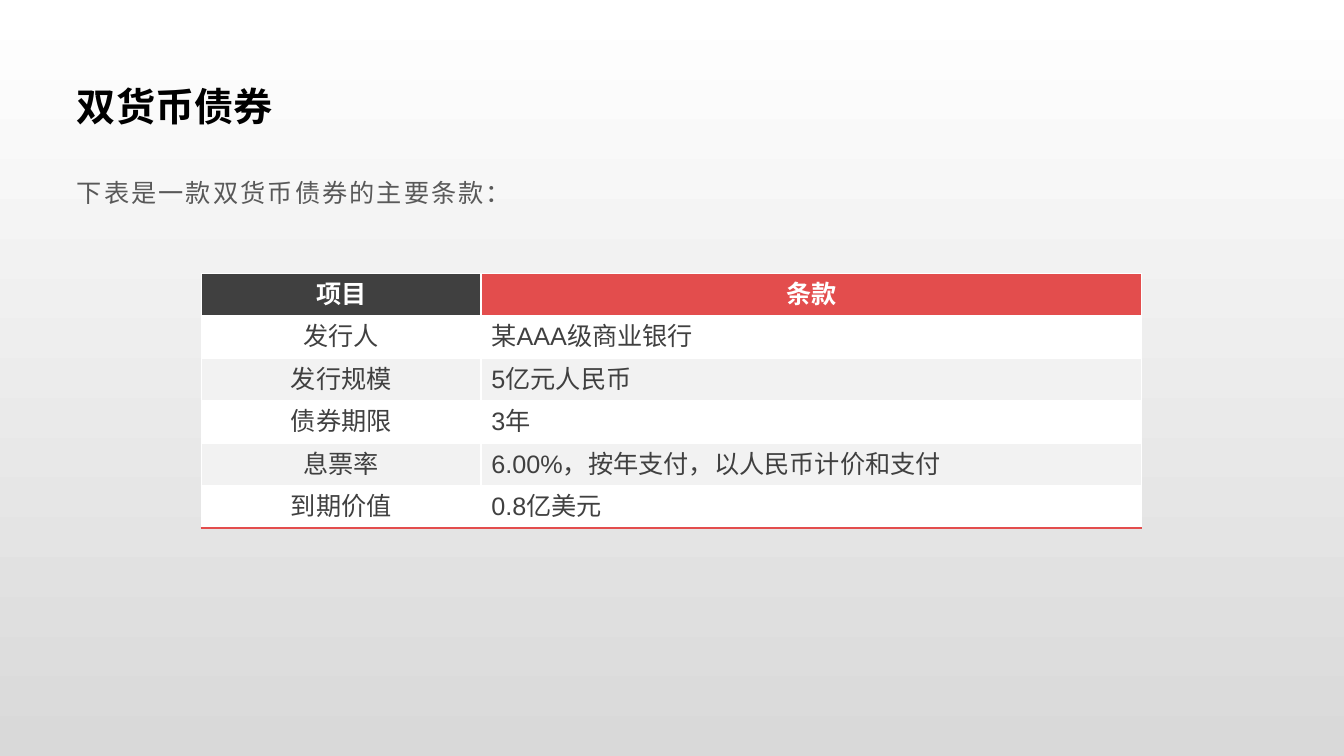
"""Build the slide on the terms of a dual-currency bond."""
from lxml import etree
from pptx import Presentation
from pptx import util as u
from pptx.dml.color import RGBColor
from pptx.enum import text
from pptx.oxml.ns import qn

TITLE = "双货币债券"
INTRO = "下表是一款双货币债券的主要条款："
TERMS = [
    ("项目", "条款"),
    ("发行人", "某AAA级商业银行"),
    ("发行规模", "5亿元人民币"),
    ("债券期限", "3年"),
    ("息票率", "6.00%，按年支付，以人民币计价和支付"),
    ("到期价值", "0.8亿美元"),
]
COLUMN_WIDTHS = (u.Cm(7.06), u.Cm(16.64))
ROW_HEIGHT = u.Cm(1.07)
FONT = "Arial"
BLACK = RGBColor(0x00, 0x00, 0x00)
WHITE = RGBColor(0xFF, 0xFF, 0xFF)
DARK = RGBColor(0x40, 0x40, 0x40)
GREY = RGBColor(0x59, 0x59, 0x59)
RED = RGBColor(0xE3, 0x4D, 0x4D)
BAND = RGBColor(0xF2, 0xF2, 0xF2)
BACKDROP = (WHITE, RGBColor(0xD9, 0xD9, 0xD9))


def style_text(para, size, color, bold=False):
    for span in para.runs:
        font = span.font
        font.name, font.size, font.bold = FONT, u.Pt(size), bold
        font.color.rgb = color
        etree.SubElement(font._element, qn("a:ea"), typeface=FONT)


def add_text(page, top, height, words, size, color, bold=False):
    box = page.shapes.add_textbox(u.Cm(1.69), top, u.Cm(30.48), height)
    box.text_frame.word_wrap = True
    box.text_frame.text = words
    style_text(box.text_frame.paragraphs[0], size, color, bold)
    return box.text_frame


def add_borders(cell, borders):
    properties = cell._tc.get_or_add_tcPr()
    for position, (side, color) in enumerate(borders):
        line = etree.Element(qn(f"a:ln{side}"), w=str(u.Pt(1.5)))
        fill = etree.SubElement(line, qn("a:solidFill"))
        etree.SubElement(fill, qn("a:srgbClr"), val=str(color))
        properties.insert(position, line)


def add_terms(page):
    table = page.shapes.add_table(
        len(TERMS), len(COLUMN_WIDTHS), u.Cm(5.07), u.Cm(6.89),
        sum(COLUMN_WIDTHS), ROW_HEIGHT * len(TERMS)).table
    table.first_row = table.horz_banding = False
    for column, width in zip(table.columns, COLUMN_WIDTHS):
        column.width = width
    for row, terms in enumerate(TERMS):
        table.rows[row].height = ROW_HEIGHT
        header = row == 0
        for column, words in enumerate(terms):
            cell = table.cell(row, column)
            cell.text_frame.text = words
            para = cell.text_frame.paragraphs[0]
            centred = header or column == 0
            para.alignment = text.PP_ALIGN.CENTER if centred else text.PP_ALIGN.LEFT
            style_text(para, 18, WHITE if header else DARK, header)
            cell.vertical_anchor = text.MSO_ANCHOR.MIDDLE
            cell.fill.solid()
            cell.fill.fore_color.rgb = (DARK, RED)[column] if header else (BAND, WHITE)[row % 2]
            borders = [("RL"[column], WHITE)]
            if row == len(TERMS) - 1:
                borders.append(("B", RED))
            add_borders(cell, borders)


def main():
    deck = Presentation()
    deck.slide_width, deck.slide_height = u.Cm(33.87), u.Cm(19.05)
    page = deck.slides.add_slide(deck.slide_layouts[6])
    backdrop = page.background.fill
    backdrop.gradient()
    backdrop.gradient_angle = 270
    for stop, color in zip(backdrop.gradient_stops, BACKDROP):
        stop.color.rgb = color

    title = add_text(page, u.Cm(1.69), u.Cm(1.96), TITLE, 28, BLACK, True)
    title.vertical_anchor = text.MSO_ANCHOR.MIDDLE
    intro = add_text(page, u.Cm(4.11), u.Cm(13.21), INTRO, 18, GREY)
    para = intro.paragraphs[0]
    para.line_spacing = 1.3
    para.space_after = u.Pt(10)
    para.runs[0].font._element.set("spc", "150")
    add_terms(page)
    deck.save("out.pptx")


if __name__ == "__main__":
    main()
